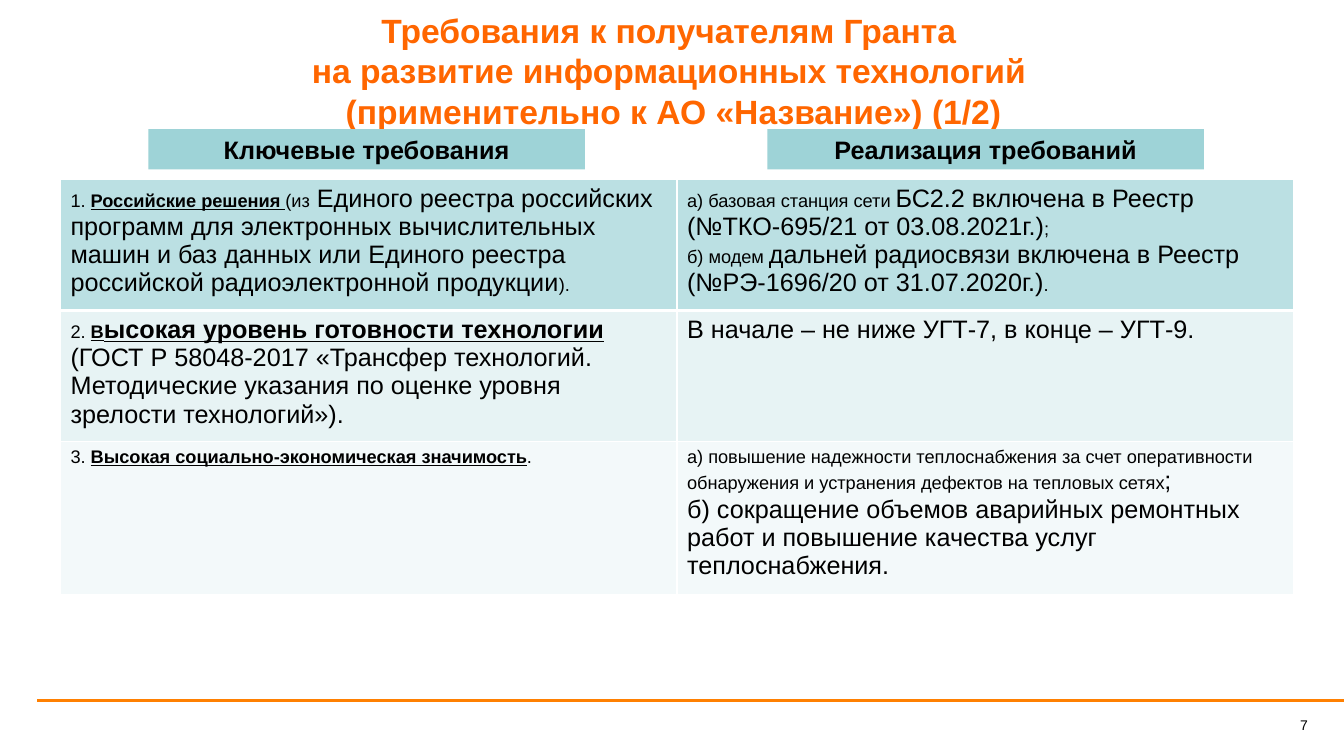
from dataclasses import dataclass

from lxml import etree
from pptx import Presentation
from pptx import util as u
from pptx.dml.color import RGBColor
from pptx.enum import shapes, text
from pptx.oxml import ns

TITLE_ORANGE = RGBColor(0xFF, 0x66, 0x00)
RULE_ORANGE = RGBColor(0xFF, 0x80, 0x01)
TEAL = RGBColor(0x9E, 0xD3, 0xD7)
ROW_FILLS = (RGBColor(0xBB, 0xE0, 0xE3), RGBColor(0xE7, 0xF3, 0xF4),
             RGBColor(0xF3, 0xF9, 0xFA))
BLACK = RGBColor(0, 0, 0)
FONT = "Arial"
SMALL, LARGE = 13, 18
CENTER, RIGHT = text.PP_ALIGN.CENTER, text.PP_ALIGN.RIGHT

prs = Presentation()
prs.slide_width, prs.slide_height = u.Inches(13.33), u.Inches(7.5)
slide = prs.slides.add_slide(prs.slide_layouts[6])


@dataclass
class Run:
    text: str
    size: int = LARGE
    bold: bool = False
    underline: bool = False
    color: RGBColor = BLACK


@dataclass
class Box:
    """Lengths in percent of the slide's width and height."""
    left: float
    top: float
    width: float
    height: float

    def emu(self) -> tuple:
        return across(self.left), down(self.top), across(self.width), down(self.height)


def across(percent: float) -> int:
    return int(prs.slide_width * percent / 100)


def down(percent: float) -> int:
    return int(prs.slide_height * percent / 100)


def write(tf, paragraphs: list, align=None) -> None:
    tf.word_wrap = True
    for i, runs in enumerate(paragraphs):
        p = tf.paragraphs[0] if i == 0 else tf.add_paragraph()
        p.alignment = align
        for run in runs:
            for n, line in enumerate(run.text.split("\n")):
                if n:
                    p.add_line_break()
                r = p.add_run()
                r.text = line
                r.font.name, r.font.size = FONT, u.Pt(run.size)
                r.font.bold, r.font.underline = run.bold, run.underline
                r.font.color.rgb = run.color


def add_text(box: Box, run: Run, align) -> None:
    tf = slide.shapes.add_textbox(*box.emu()).text_frame
    tf.vertical_anchor = text.MSO_ANCHOR.MIDDLE
    write(tf, [[run]], align)


def add_heading(box: Box, label: str) -> None:
    sp = slide.shapes.add_shape(shapes.MSO_SHAPE.RECTANGLE, *box.emu())
    sp.shadow.inherit = False
    sp.fill.solid()
    sp.fill.fore_color.rgb = TEAL
    sp.line.fill.background()
    write(sp.text_frame, [[Run(label, bold=True)]], CENTER)


def add_borders(cell, bottom: float) -> None:
    props = cell._tc.get_or_add_tcPr()
    widths = {"lnL": 1, "lnR": 1, "lnT": 1, "lnB": bottom}
    for i, (side, width) in enumerate(widths.items()):
        ln = etree.Element(ns.qn(f"a:{side}"), w=str(u.Pt(width)))
        fill = etree.SubElement(ln, ns.qn("a:solidFill"))
        etree.SubElement(fill, ns.qn("a:srgbClr"), val="FFFFFF")
        props.insert(i, ln)


# Footer rule and slide number
rule = slide.shapes.add_connector(shapes.MSO_CONNECTOR.STRAIGHT, across(2.78),
                                  down(92.67), across(100), down(92.67))
rule.line.color.rgb = RULE_ORANGE
rule.line.width = u.Pt(2.25)
etree.SubElement(rule._element.spPr, ns.qn("a:effectLst"))
add_text(Box(90.17, 94.13, 7.88, 3.6), Run("7", 10), RIGHT)

# Title
add_text(Box(3.98, 1.73, 92.27, 15.2),
         Run("Требования к получателям Гранта \n"
             "на развитие информационных технологий \n"
             "(применительно к АО «Название») (1/2)", 24, True, color=TITLE_ORANGE),
         CENTER)

# Column headings
for left, label in ((11.03, "Ключевые требования"), (57.09, "Реализация требований")):
    add_heading(Box(left, 17.07, 32.48, 5.33), label)

# Requirements table: rows of cells, cells of paragraphs, paragraphs of runs
REQUIREMENTS = [
    [
        [[Run("1. ", SMALL), Run("Российские решения ", SMALL, True, True),
          Run("(из", SMALL),
          Run(" Единого реестра российских программ для электронных вычислительных "
              "машин и баз данных или Единого реестра российской радиоэлектронной "
              "продукции"),
          Run(").", SMALL)]],
        [[Run("а) базовая станция сети ", SMALL),
          Run("БС2.2 включена в Реестр (№ТКО-695/21 от 03.08.2021г.)"),
          Run(";", SMALL)],
         [Run("б) модем ", SMALL),
          Run("дальней радиосвязи включена в Реестр (№РЭ-1696/20 от 31.07.2020г.)"),
          Run(".", SMALL)]],
    ],
    [
        [[Run("2. ", SMALL), Run("В", SMALL, True, True),
          Run("ысокая уровень готовности технологии ", LARGE, True, True),
          Run("(ГОСТ Р 58048-2017 «Трансфер технологий. Методические указания "
              "по оценке уровня зрелости технологий»).")]],
        [[Run("В начале – не ниже УГТ-7, в конце – УГТ-9.")]],
    ],
    [
        [[Run("3. ", SMALL),
          Run("Высокая социально-экономическая значимость", SMALL, True, True),
          Run(".", SMALL)]],
        [[Run("а) повышение надежности теплоснабжения за счет оперативности "
              "обнаружения и устранения дефектов на тепловых сетях", SMALL),
          Run(";")],
         [Run("б) сокращение объемов аварийных ремонтных работ и повышение "
              "качества услуг теплоснабжения.")]],
    ],
]
ROW_HEIGHTS = (17.2, 17.33, 20.2)

table = slide.shapes.add_table(3, 2, *Box(4.5, 23.73, 91.75, sum(ROW_HEIGHTS)).emu()).table
table.first_row = table.horz_banding = False
for i, (cells, height, color) in enumerate(zip(REQUIREMENTS, ROW_HEIGHTS, ROW_FILLS)):
    table.rows[i].height = down(height)
    for j, paragraphs in enumerate(cells):
        cell = table.cell(i, j)
        cell.fill.solid()
        cell.fill.fore_color.rgb = color
        add_borders(cell, bottom=3 if i == 0 else 1)
        write(cell.text_frame, paragraphs)

prs.save("out.pptx")
